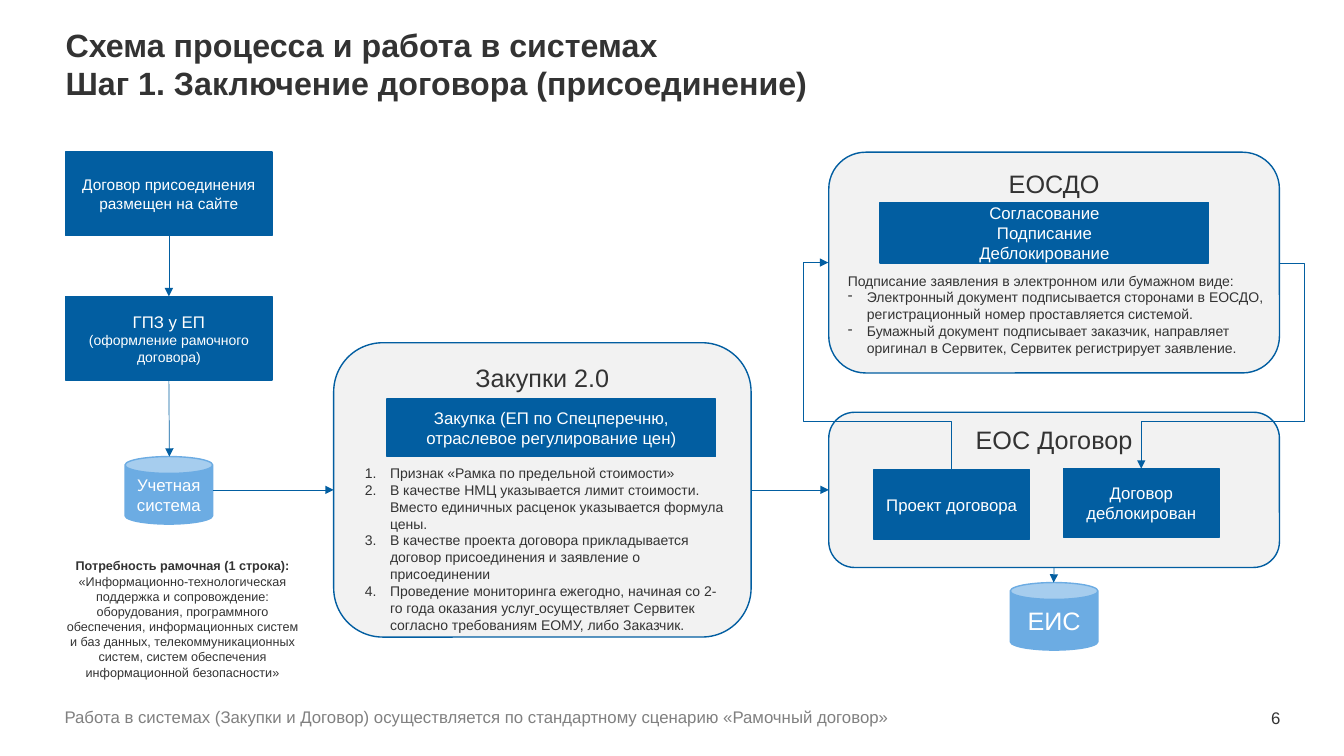
from lxml import etree
from pptx import Presentation
from pptx.dml.color import RGBColor
from pptx.enum.shapes import MSO_CONNECTOR, MSO_SHAPE
from pptx.enum.text import MSO_ANCHOR, PP_ALIGN
from pptx.oxml.ns import qn
from pptx.util import Pt

RECT, ROUND, CAN = MSO_SHAPE.RECTANGLE, MSO_SHAPE.ROUNDED_RECTANGLE, MSO_SHAPE.CAN
STRAIGHT, ELBOW = MSO_CONNECTOR.STRAIGHT, MSO_CONNECTOR.ELBOW
TOP, MIDDLE, BOTTOM = MSO_ANCHOR.TOP, MSO_ANCHOR.MIDDLE, MSO_ANCHOR.BOTTOM
LEFT, CENTER, RIGHT = PP_ALIGN.LEFT, PP_ALIGN.CENTER, PP_ALIGN.RIGHT
SIDE = {"top": 0, "left": 1, "bottom": 2, "right": 3}

PX = 9144  # 100 px to the inch
COLORS = {"blue": "025EA1", "sky": "6CACE3", "panel": "F2F2F2",
          "text": "333333", "muted": "808080", "white": "FFFFFF"}
FONT = "Arial"


def px(*lengths):
    return [length * PX for length in lengths]


def rgb(name):
    return RGBColor.from_string(COLORS[name])


class SchemeSlide:
    def __init__(self, presentation):
        self.slide = presentation.slides.add_slide(presentation.slide_layouts[5])
        self.shapes = self.slide.shapes

    def fill_text(self, shape, paragraphs, size, color="text", align=CENTER, anchor=TOP,
                  inset=None, spacing=None, bullet=None, indent=0, plain=0, bold=False):
        """Each paragraph is a string or a list of (text, font values) runs."""
        frame = shape.text_frame
        frame_format = {"word_wrap": True, "vertical_anchor": anchor}
        if inset is not None:
            for side in SIDE:
                frame_format["margin_" + side] = inset
        for name, value in frame_format.items():
            setattr(frame, name, value)
        for index, runs in enumerate(paragraphs):
            paragraph = frame.paragraphs[0] if index == 0 else frame.add_paragraph()
            paragraph.alignment = align
            if spacing:
                paragraph.line_spacing = spacing
            if bullet and index >= plain:
                self.add_bullet(paragraph, bullet, indent)
            for text, changes in [(runs, {})] if isinstance(runs, str) else runs:
                for number, line in enumerate(text.split("\n")):
                    if number:
                        paragraph.add_line_break()
                    run = paragraph.add_run()
                    run.text = line
                    font_format = {"name": FONT, "size": Pt(size), "bold": bold, **changes}
                    for name, value in font_format.items():
                        setattr(run.font, name, value)
                    run.font.color.rgb = rgb(color)

    def add_bullet(self, paragraph, bullet, indent):
        properties = paragraph._p.get_or_add_pPr()
        properties.set("marL", str(indent * PX))
        properties.set("indent", str(-indent * PX))
        if bullet == "1.":
            etree.SubElement(properties, qn("a:buAutoNum"), type="arabicPeriod")
        else:
            etree.SubElement(properties, qn("a:buChar"), char=bullet)

    def title(self, box, text):
        title = self.shapes.title
        title.left, title.top, title.width, title.height = px(*box)
        self.fill_text(title, [text], 23, align=LEFT, inset=0, bold=True)

    def text(self, box, paragraphs, size, **style):
        self.fill_text(self.shapes.add_textbox(*px(*box)), paragraphs, size, **style)

    def shape(self, kind, box, paragraphs, size, fill, line, **style):
        shape = self.shapes.add_shape(kind, *px(*box))
        shape.shadow.inherit = False
        shape.fill.solid()
        shape.fill.fore_color.rgb = rgb(fill)
        shape.line.color.rgb = rgb(line)
        shape.line.width = Pt(1)
        self.fill_text(shape, paragraphs, size, **style)
        return shape

    def panel(self, box, heading):
        return self.shape(ROUND, box, [heading], 18, "panel", "blue")

    def step(self, box, paragraphs, size=12):
        return self.shape(RECT, box, paragraphs, size, "blue", "blue",
                          color="white", anchor=MIDDLE)

    def store(self, left, top, label, size):
        return self.shape(CAN, (left, top, 87, 67), [label], size, "sky", "sky",
                          color="white", anchor=MIDDLE)

    def arrow(self, points, begin=None, end=None, kind=STRAIGHT):
        connector = self.shapes.add_connector(kind, *px(*points))
        connector.line.color.rgb = rgb("blue")
        connector.line.width = Pt(0.5)
        properties = connector._element.spPr
        etree.SubElement(properties.find(qn("a:ln")), qn("a:tailEnd"), type="triangle")
        etree.SubElement(properties, qn("a:effectLst"))
        if begin:
            connector.begin_connect(begin[0], SIDE[begin[1]])
        if end:
            connector.end_connect(end[0], SIDE[end[1]])
        return connector

    def bent_arrow(self, points, adjustments, turn=0):
        properties = self.arrow(points, kind=ELBOW)._element.spPr
        if turn:
            properties.find(qn("a:xfrm")).set("rot", str(turn * 60000))
        geometry = properties.find(qn("a:prstGeom"))
        geometry.set("prst", "bentConnector4")
        guides = geometry.find(qn("a:avLst"))
        if guides is None:
            guides = etree.SubElement(geometry, qn("a:avLst"))
        for number, value in enumerate(adjustments, 1):
            etree.SubElement(guides, qn("a:gd"), name=f"adj{number}", fmla=f"val {value}")


def main():
    presentation = Presentation()
    presentation.slide_width, presentation.slide_height = px(1333, 750)
    scheme = SchemeSlide(presentation)

    # Title, footer and page number
    scheme.title((65, 25, 897, 79),
                 "Схема процесса и работа в системах\nШаг 1. Заключение договора (присоединение)")
    edge = {"inset": 0, "spacing": 0.9, "anchor": BOTTOM}
    scheme.text((64, 705, 1126, 16),
                ["Работа в системах (Закупки и Договор) осуществляется по стандартному "
                 "сценарию «Рамочный договор»"], 12, color="muted", align=LEFT, **edge)
    scheme.text((1220, 698, 50, 24), ["6"], 12, align=RIGHT, **edge)

    # System panels
    contract_system = scheme.panel((822, 409, 447, 154), "ЕОС Договор")
    purchasing = scheme.panel((331, 340, 414, 292), "Закупки 2.0")
    scheme.panel((822, 151, 447, 219), "ЕОСДО")

    # Preparation column
    published = scheme.step((65, 151, 205, 83), ["Договор присоединения размещен на сайте"], 11)
    plan = scheme.step((65, 294, 205, 83),
                       ["ГПЗ у ЕП", [("(оформление рамочного договора)", {"size": Pt(10)})]])
    scheme.store(124, 453, "Учетная система", 12)
    scheme.text((53, 549, 256, 131), [
        [("Потребность рамочная (1 строка):", {"bold": True})],
        "«Информационно-технологическая поддержка и сопровождение: оборудования, "
        "программного обеспечения, информационных систем и баз данных, телекоммуникационных "
        "систем, систем обеспечения информационной безопасности»"], 9)

    # Purchasing
    scheme.step((384, 396, 326, 57), ["Закупка (ЕП по Спецперечню, отраслевое регулирование цен)"])
    scheme.text((352, 456, 379, 178), [
        "Признак «Рамка по предельной стоимости»",
        "В качестве НМЦ указывается лимит стоимости. Вместо единичных расценок "
        "указывается формула цены.",
        "В качестве проекта договора прикладывается договор присоединения и заявление "
        "о присоединении",
        [("Проведение мониторинга ежегодно, начиная со 2-го года оказания услуг", {}),
         (" ", {"underline": True}),
         ("осуществляет Сервитек согласно требованиям ЕОМУ, либо Заказчик.", {})],
    ], 10, align=LEFT, bullet="1.", indent=25)

    # Signing
    scheme.step((873, 201, 326, 60), ["Согласование", "Подписание", "Деблокирование"])
    scheme.text((831, 265, 438, 94), [
        "Подписание заявления в электронном или бумажном виде:",
        "Электронный документ подписывается сторонами в ЕОСДО, регистрационный номер "
        "проставляется системой.",
        "Бумажный документ подписывает заказчик, направляет оригинал в Сервитек, "
        "Сервитек регистрирует заявление.",
    ], 10, align=LEFT, bullet="-", indent=19, plain=1)

    # Contract states and the state register
    scheme.step((867, 466, 154, 69), ["Проект договора"])
    scheme.step((1055, 465, 154, 68), ["Договор деблокирован"])
    scheme.store(1002, 578, "ЕИС", 18)

    # Flow arrows
    scheme.arrow((168, 234, 168, 294), (published, "bottom"), (plan, "top"))
    scheme.arrow((168, 377, 168, 453), (plan, "bottom"))
    scheme.arrow((211, 486, 331, 486), end=(purchasing, "left"))
    scheme.arrow((745, 486, 822, 486), (purchasing, "right"), (contract_system, "left"))
    scheme.arrow((1045, 563, 1045, 578), (contract_system, "bottom"))
    scheme.bent_arrow((780, 424, 985, 302), (23300, 120500), turn=270)
    scheme.bent_arrow((1269, 261, 1132, 465), (-18200, 76800))

    presentation.save("out.pptx")


if __name__ == "__main__":
    main()
